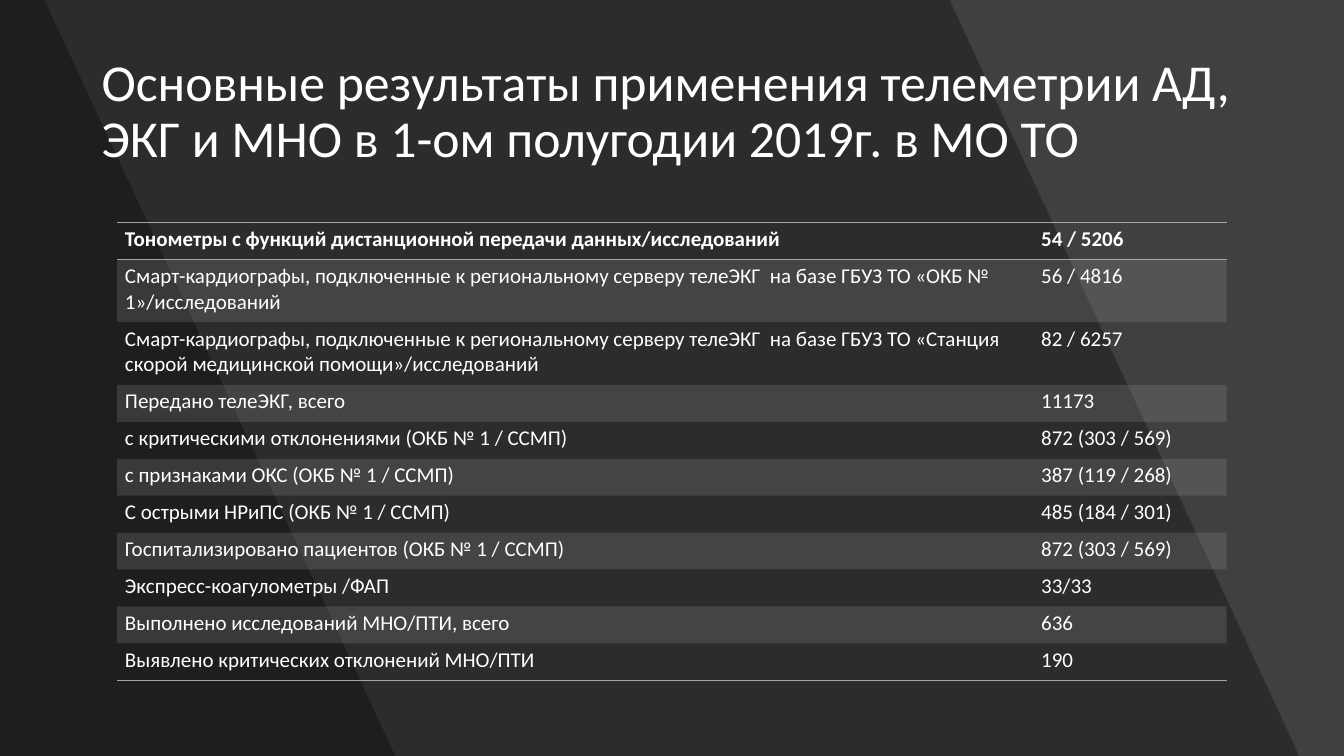
from lxml.etree import SubElement
from pptx import Presentation
from pptx.dml.color import RGBColor
from pptx.enum.text import MSO_ANCHOR
from pptx.oxml import parse_xml
from pptx.oxml.ns import nsdecls, qn
from pptx.util import Cm, Pt

COLORS = {"background": "404040", "shade": "000000", "text": "FFFFFF", "rule": "A5A5A5"}
FONT = "Calibri"
NO_STYLE = "{2D5ABB26-0587-4C30-8999-92F81FD0307C}"
WIDTH, HEIGHT = 33.87, 19.05
ROW_HEIGHT, TALL_ROW_HEIGHT = 0.93, 1.58
TALL_ROWS = (1, 2)

TITLE = "Основные результаты применения телеметрии АД, ЭКГ и МНО в 1-ом полугодии 2019г. в МО ТО"
RESULTS = [
    ("Тонометры с функций дистанционной передачи данных/исследований", "54 / 5206"),
    ("Смарт-кардиографы, подключенные к региональному серверу телеЭКГ  на базе ГБУЗ ТО "
     "«ОКБ № 1»/исследований", "56 / 4816"),
    ("Смарт-кардиографы, подключенные к региональному серверу телеЭКГ  на базе ГБУЗ ТО "
     "«Станция скорой медицинской помощи»/исследований", "82 / 6257"),
    ("Передано телеЭКГ, всего", "11173"),
    ("с критическими отклонениями (ОКБ № 1 / ССМП)", "872 (303 / 569)"),
    ("с признаками ОКС (ОКБ № 1 / ССМП)", "387 (119 / 268)"),
    ("С острыми НРиПС (ОКБ № 1 / ССМП)", "485 (184 / 301)"),
    ("Госпитализировано пациентов (ОКБ № 1 / ССМП)", "872 (303 / 569)"),
    ("Экспресс-коагулометры /ФАП", "33/33"),
    ("Выполнено исследований МНО/ПТИ, всего", "636"),
    ("Выявлено критических отклонений МНО/ПТИ", "190"),
]


class SlideBuilder:
    def __init__(self, slide):
        self.slide = slide

    def background(self, color):
        fill = self.slide.background.fill
        fill.solid()
        fill.fore_color.rgb = RGBColor.from_string(COLORS[color])

    def tint(self, fill, color, opacity):
        """Fill with a colour of the given opacity in percent."""
        fill.solid()
        fill.fore_color.rgb = RGBColor.from_string(COLORS[color])
        color_node = fill._xPr.find(qn("a:solidFill"))[0]
        SubElement(color_node, qn("a:alpha")).set("val", str(opacity * 1000))

    def slanted_panel(self, top_edge, bottom_edge):
        """Shade the slide from its left side to a slanted edge."""
        outline = self.slide.shapes.build_freeform(0, 0)
        corners = [(top_edge, 0), (bottom_edge, HEIGHT), (0, HEIGHT)]
        outline.add_line_segments([(Cm(x), Cm(y)) for x, y in corners], close=True)
        panel = outline.convert_to_shape()
        panel.shadow.inherit = False
        panel.line.fill.background()
        self.tint(panel.fill, "shade", 30)

    def style_text(self, paragraph, size, bold=False):
        for run in paragraph.runs:
            run.font.name = FONT
            run.font.size = Pt(size)
            run.font.bold = bold
            run.font.color.rgb = RGBColor.from_string(COLORS["text"])

    def title(self, text, left, top, width, height):
        box = self.slide.shapes.add_textbox(Cm(left), Cm(top), Cm(width), Cm(height))
        frame = box.text_frame
        frame.word_wrap = True
        frame.vertical_anchor = MSO_ANCHOR.MIDDLE
        frame.text = text
        frame.paragraphs[0].line_spacing = 0.9
        self.style_text(frame.paragraphs[0], 37)

    def border(self, cell, side):
        """Rule one side of a cell: T or B."""
        cell._tc.get_or_add_tcPr().insert(0, parse_xml(
            f'<a:ln{side} {nsdecls("a")} w="{Pt(1)}"><a:solidFill>'
            f'<a:srgbClr val="{COLORS["rule"]}"/></a:solidFill></a:ln{side}>'))

    def table(self, rows, left, top, column_widths):
        heights = [TALL_ROW_HEIGHT if i in TALL_ROWS else ROW_HEIGHT for i in range(len(rows))]
        frame = self.slide.shapes.add_table(
            len(rows), len(column_widths), Cm(left), Cm(top),
            Cm(sum(column_widths)), Cm(sum(heights)))
        table = frame.table
        table.first_row = table.horz_banding = False
        frame._element.find(".//" + qn("a:tableStyleId")).text = NO_STYLE
        for column, width in zip(table.columns, column_widths):
            column.width = Cm(width)
        for i, (row, texts) in enumerate(zip(table.rows, rows)):
            row.height = Cm(heights[i])
            for cell, text in zip(row.cells, texts):
                cell.margin_left = cell.margin_right = Cm(0.2)
                cell.margin_top = cell.margin_bottom = Cm(0.1)
                cell.text = text
                self.style_text(cell.text_frame.paragraphs[0], 15, bold=i == 0)
                if i % 2:
                    self.tint(cell.fill, "rule", 20)
                else:
                    cell.fill.background()
                if i in (0, len(rows) - 1):
                    self.border(cell, "B")
                if i == 0:
                    self.border(cell, "T")


def main():
    presentation = Presentation()
    presentation.slide_width, presentation.slide_height = Cm(WIDTH), Cm(HEIGHT)
    builder = SlideBuilder(presentation.slides.add_slide(presentation.slide_layouts[6]))
    builder.background("background")
    builder.slanted_panel(23.93, 32.74)
    builder.slanted_panel(1.12, 9.96)
    builder.title(TITLE, 2.31, 1.01, 29.21, 3.68)
    builder.table(RESULTS, 2.95, 5.61, (23.09, 4.87))
    presentation.save("out.pptx")


if __name__ == "__main__":
    main()
